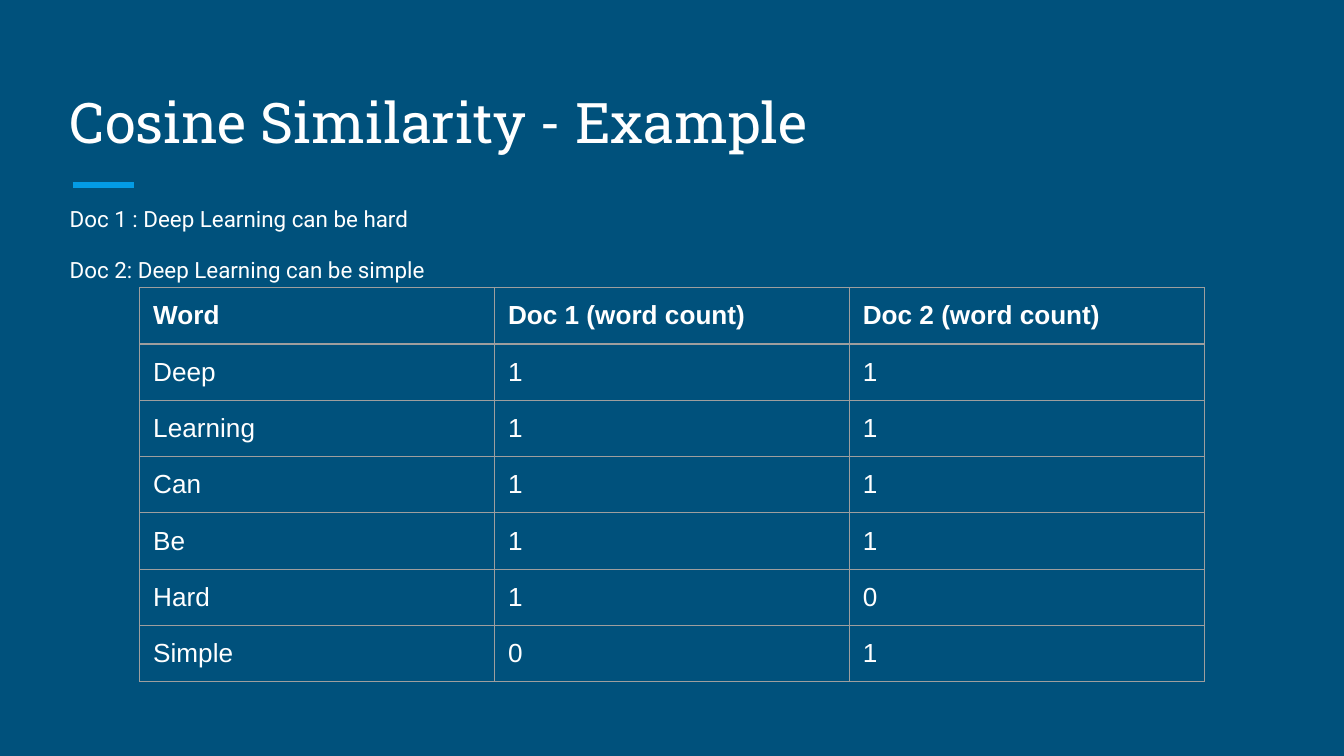
from dataclasses import dataclass

from lxml import etree
from pptx import Presentation
from pptx.dml.color import RGBColor
from pptx.enum.shapes import MSO_CONNECTOR
from pptx.enum.text import MSO_ANCHOR, MSO_AUTO_SIZE, PP_ALIGN
from pptx.oxml.ns import qn
from pptx.util import Pt

STRAIGHT = MSO_CONNECTOR.STRAIGHT
TOP, BOTTOM = MSO_ANCHOR.TOP, MSO_ANCHOR.BOTTOM
LEFT = PP_ALIGN.LEFT
NO_FIT = MSO_AUTO_SIZE.NONE

NAVY = RGBColor(0x00, 0x51, 0x7C)
SKY = RGBColor(0x03, 0x9B, 0xE5)
GREY = RGBColor(0x9E, 0x9E, 0x9E)
WHITE = RGBColor(0xFF, 0xFF, 0xFF)

EDGE, WIDE = 30.24, 658.8  # left and width shared by title and text
INSET = Pt(7.2)
COL, ROW = 190.08, 30


@dataclass
class Font:
    name: str
    size: float
    bold: bool = False


@dataclass
class Count:
    word: str
    first: str
    second: str


HEAD = Count("Word", "Doc 1 (word count)", "Doc 2 (word count)")
COUNTS = [
    Count("Deep", "1", "1"),
    Count("Learning", "1", "1"),
    Count("Can", "1", "1"),
    Count("Be", "1", "1"),
    Count("Hard", "1", "0"),
    Count("Simple", "0", "1"),
]
DOCS = ["Doc 1 : Deep Learning can be hard", "Doc 2: Deep Learning can be simple"]


def style(para, font: Font) -> None:
    para.alignment = LEFT
    para.font.name = font.name
    para.font.size = Pt(font.size)
    para.font.bold = font.bold
    para.font.color.rgb = WHITE


def pad(box) -> None:
    """Give a text frame or a cell the same inset on all sides."""
    box.margin_left = box.margin_right = INSET
    box.margin_top = box.margin_bottom = INSET


def fill_frame(shape, lines: list[str], font: Font, anchor) -> None:
    frame = shape.text_frame
    frame.text = "\n".join(lines)
    frame.word_wrap = True
    frame.auto_size = NO_FIT
    frame.vertical_anchor = anchor
    pad(frame)
    for para in frame.paragraphs:
        style(para, font)


def add_edges(cell, color: RGBColor, width: float) -> None:
    props = cell._tc.get_or_add_tcPr()
    for side in ("a:lnL", "a:lnR", "a:lnT", "a:lnB"):
        line = etree.SubElement(props, qn(side), w=str(Pt(width)))
        solid = etree.SubElement(line, qn("a:solidFill"))
        etree.SubElement(solid, qn("a:srgbClr"), val=str(color))


def fill_row(cells, count: Count, font: Font) -> None:
    for cell, text in zip(cells, (count.word, count.first, count.second)):
        cell.text = text
        pad(cell)
        cell.vertical_anchor = TOP
        style(cell.text_frame.paragraphs[0], font)
        add_edges(cell, GREY, 0.75)
        cell.fill.background()


def main() -> None:
    deck = Presentation()
    deck.slide_width, deck.slide_height = Pt(720), Pt(405)
    slide = deck.slides.add_slide(deck.slide_layouts[5])
    slide.background.fill.solid()
    slide.background.fill.fore_color.rgb = NAVY

    # Accent line under the title
    rule = slide.shapes.add_connector(STRAIGHT, Pt(38.9), Pt(99.2), Pt(72), Pt(99.2))
    rule.line.color.rgb = SKY
    rule.line.width = Pt(3)
    etree.SubElement(rule._element.spPr, qn("a:effectLst"))

    # Title
    title = slide.shapes.title
    title.left, title.top = Pt(EDGE), Pt(36)
    title.width, title.height = Pt(WIDE), Pt(54)
    fill_frame(title, ["Cosine Similarity - Example"], Font("Roboto Slab", 30), BOTTOM)

    # The two documents
    body = slide.shapes.add_textbox(Pt(EDGE), Pt(102.24), Pt(WIDE), Pt(252.72))
    fill_frame(body, DOCS, Font("Roboto", 12), TOP)
    for para in body.text_frame.paragraphs:
        para.line_spacing = 1.05
    body.text_frame.paragraphs[1].space_before = Pt(12)

    # Word counts
    rows = [HEAD, *COUNTS]
    table = slide.shapes.add_table(
        len(rows), 3, Pt(74.88), Pt(154.08), Pt(3 * COL), Pt(len(rows) * ROW)
    ).table
    table.first_row = table.horz_banding = False
    for row, count in zip(table.rows, rows):
        fill_row(row.cells, count, Font("Arial", 14, bold=count is HEAD))

    deck.save("out.pptx")


if __name__ == "__main__":
    main()
